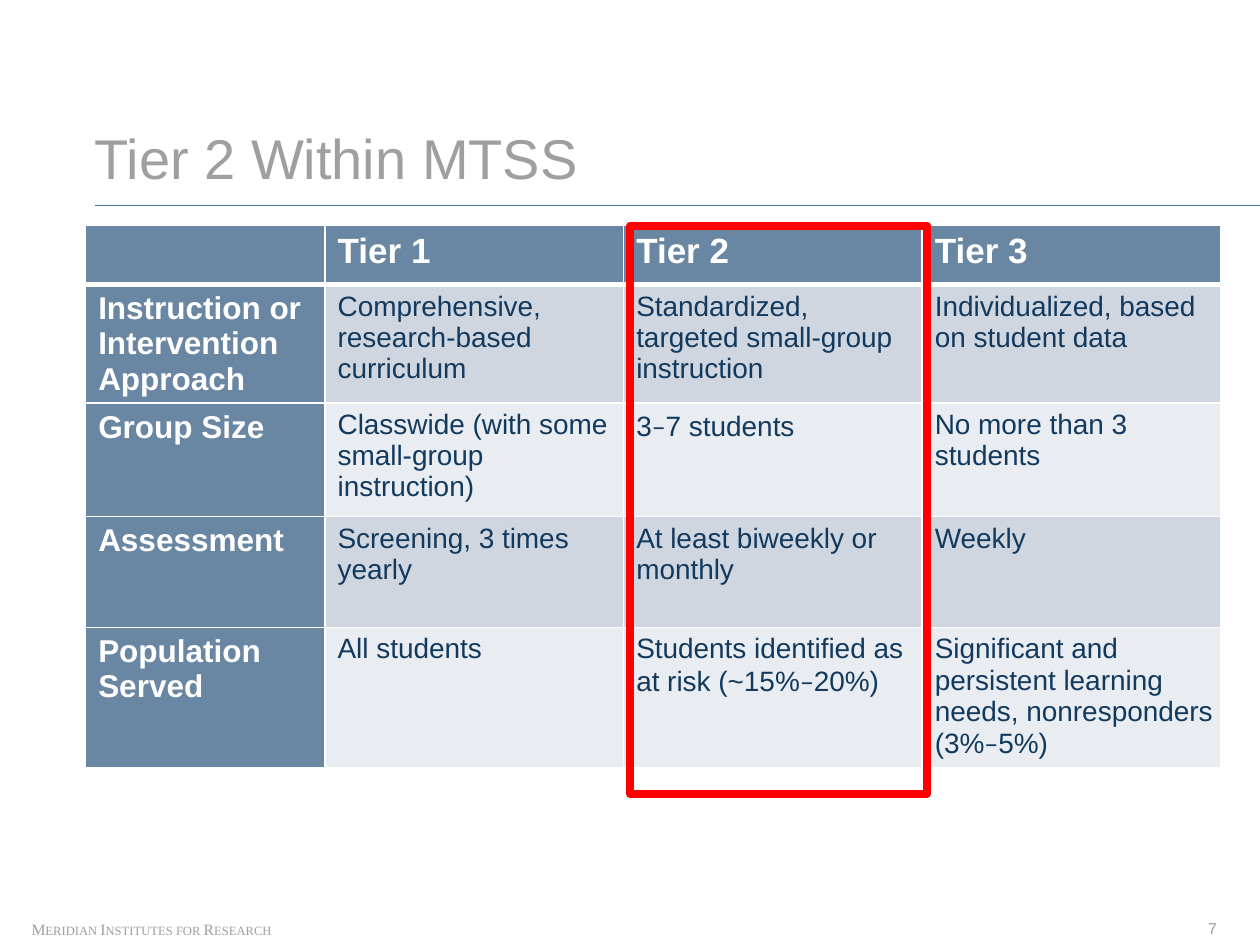
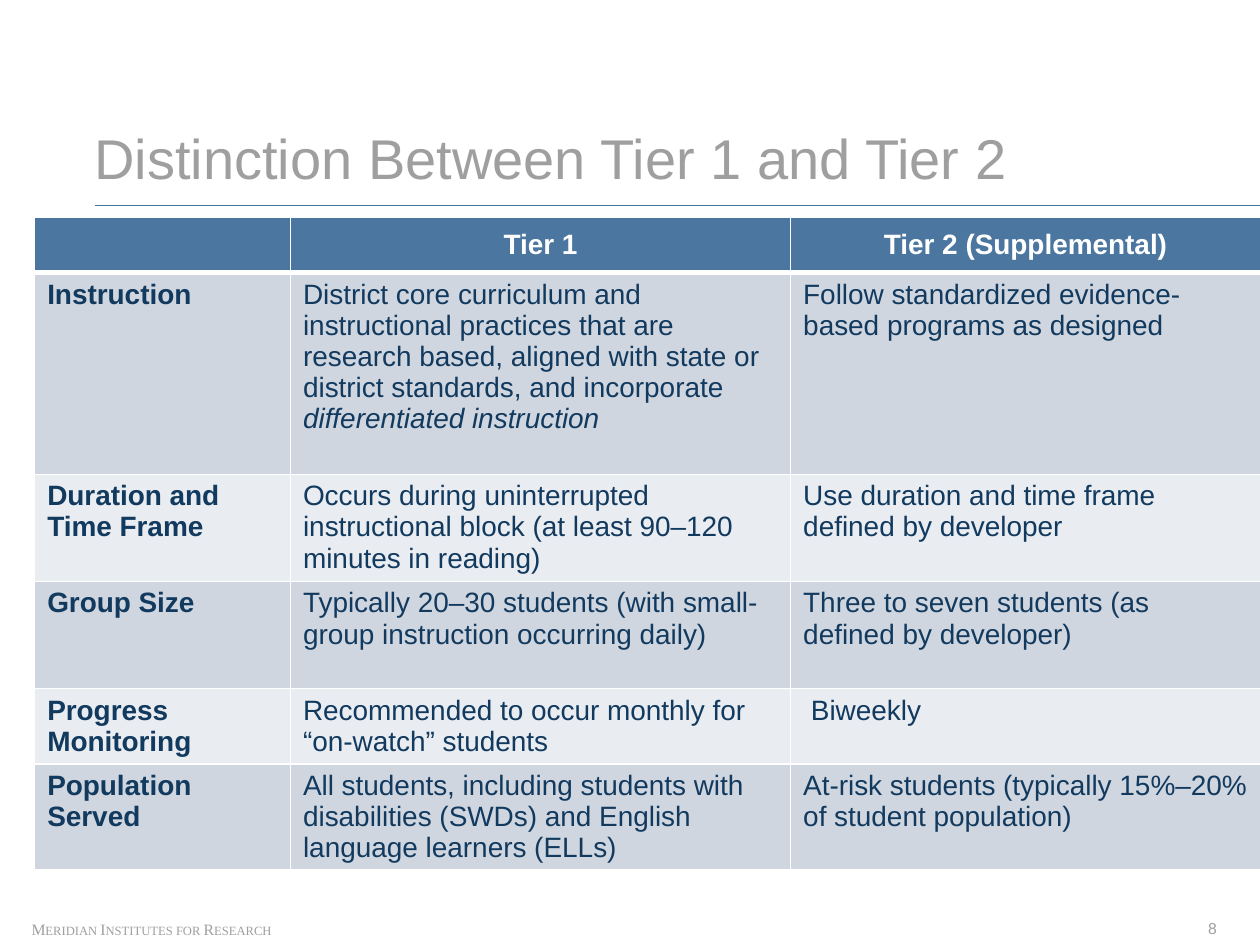
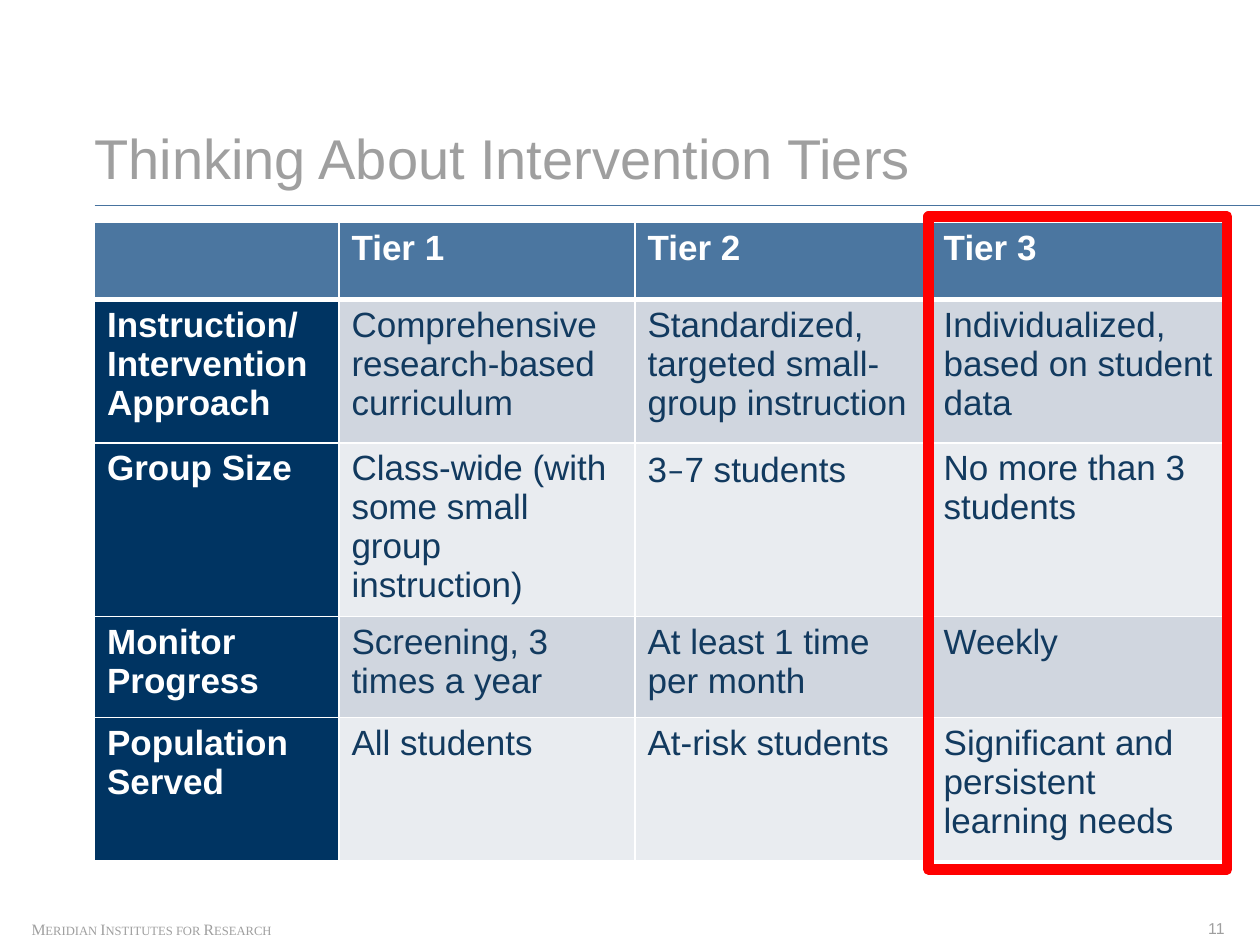
from dataclasses import dataclass, field

from lxml import etree
from pptx import Presentation
from pptx import util as u
from pptx.dml.color import RGBColor
from pptx.enum import shapes, text
from pptx.oxml.ns import qn


@dataclass(frozen=True)
class Theme:
    """Colours, fonts and type sizes shared by the deck."""
    font: str = "Arial"
    footer_font: str = "Times New Roman"
    dash_font: str = "Calibri"
    grey: str = "9F9F9F"
    rule: str = "47739F"
    ink: str = "123A5F"
    white: str = "FFFFFF"
    red: str = "FF0000"
    slate: str = "6986A3"
    blue: str = "4B76A0"
    navy: str = "003462"
    bands: tuple = ("D0D6DF", "E9ECF0")
    title_size: float = 32
    footer_size: float = 9
    border: float = 1
    header_border: float = 3


THEME = Theme()


@dataclass
class Grid:
    """Content and styling of one tier comparison table."""
    box: tuple
    columns: list
    heights: list
    rows: list
    header_fill: str
    header_size: float
    label_size: float
    body_size: float
    label_fill: str = ""
    label_color: str = THEME.white
    centred_header: bool = False
    tight_columns: tuple = ()
    accent: dict = field(default_factory=lambda: {"name": THEME.dash_font})


def points(*lengths):
    """Turn numbers into point lengths."""
    return [u.Pt(length) for length in lengths]


def style(font, size, color, name=THEME.font, bold=False):
    """Apply face, size, colour and weight to a font."""
    font.name, font.size, font.bold = name, u.Pt(size), bold
    font.color.rgb = RGBColor.from_string(color)


def clear_margins(frame):
    """Remove the inner margins of a text frame."""
    frame.margin_left = frame.margin_top = frame.margin_right = frame.margin_bottom = 0


def add_small_text(page, box, words, name=THEME.font):
    """Place a one-line grey footer text and return its shape."""
    label = page.shapes.add_textbox(*points(*box))
    frame = label.text_frame
    frame.word_wrap = False
    frame.auto_size = text.MSO_AUTO_SIZE.SHAPE_TO_FIT_TEXT
    clear_margins(frame)
    frame.text = words
    style(frame.paragraphs[0].runs[0].font, THEME.footer_size, THEME.grey, name)
    return label


def furnish_layout(layout, page):
    """Build the footer name and title rule and move them to the layout."""
    footer = add_small_text(page, (18, 525.6, 140.4, 10.8),
                            "Meridian Institutes for Research", THEME.footer_font)
    for props in footer.element.iter(qn("a:rPr")):
        props.set("cap", "small")
    rule = page.shapes.add_connector(shapes.MSO_CONNECTOR.STRAIGHT,
                                     *points(54, 117.2, 720, 117.2))
    rule.line.color.rgb = RGBColor.from_string(THEME.rule)
    rule.line.width = u.Pt(0.5)
    etree.SubElement(rule.element.find(qn("p:spPr")), qn("a:effectLst"))
    for part in (footer, rule):
        layout.shapes.element.append(part.element)


def add_title(page, words, box=(54, 69.84, 647.28, 38.88)):
    """Fill and place the title placeholder."""
    title = page.shapes.title
    title.left, title.top, title.width, title.height = points(*box)
    frame = title.text_frame
    frame.text = words
    frame.word_wrap = True
    frame.auto_size = text.MSO_AUTO_SIZE.NONE
    frame.vertical_anchor = text.MSO_ANCHOR.BOTTOM
    clear_margins(frame)
    para = frame.paragraphs[0]
    para.alignment = text.PP_ALIGN.LEFT
    style(para.runs[0].font, THEME.title_size, THEME.grey)


def set_borders(cell, row):
    """Draw white cell borders, thicker between the header and the body."""
    edges = {"L": THEME.border, "R": THEME.border,
             "T": THEME.header_border if row == 1 else THEME.border,
             "B": THEME.header_border if row == 0 else THEME.border}
    props = cell._tc.get_or_add_tcPr()
    for side, width in edges.items():
        line = etree.SubElement(props, qn("a:ln" + side), w=str(u.Pt(width)))
        fill = etree.SubElement(line, qn("a:solidFill"))
        etree.SubElement(fill, qn("a:srgbClr"), val=THEME.white)


def write_cell(cell, words, size, color, bold, accent):
    """Write paragraphs whose pieces between bars take the accent format."""
    frame = cell.text_frame
    for index, line in enumerate(words.split("\n")):
        para = frame.add_paragraph() if index else frame.paragraphs[0]
        for order, piece in enumerate(line.split("|")):
            span = para.add_run()
            span.text = piece
            style(span.font, size, color, bold=bold)
            if order % 2:
                for key, value in accent.items():
                    setattr(span.font, key, value)


def cell_look(grid, row, column):
    """Return fill, type size, text colour and weight for a cell."""
    band = THEME.bands[(row + 1) % 2]
    if row == 0:
        return grid.header_fill, grid.header_size, THEME.white, True
    if column == 0:
        return grid.label_fill or band, grid.label_size, grid.label_color, True
    return band, grid.body_size, THEME.ink, False


def add_grid(page, grid):
    """Build the comparison table at its place."""
    size = (sum(grid.columns), sum(grid.heights))
    frame = page.shapes.add_table(len(grid.rows), len(grid.columns),
                                  *points(*grid.box, *size))
    table = frame.table
    for column, width in zip(table.columns, grid.columns):
        column.width = u.Pt(width)
    for row, height in zip(table.rows, grid.heights):
        row.height = u.Pt(height)
    for row, entries in enumerate(grid.rows):
        for column, words in enumerate(entries):
            cell = table.cell(row, column)
            fill, *look = cell_look(grid, row, column)
            set_borders(cell, row)
            cell.fill.solid()
            cell.fill.fore_color.rgb = RGBColor.from_string(fill)
            if row and column in grid.tight_columns:
                cell.margin_right = 0
            if words:
                write_cell(cell, words, *look, grid.accent)
            if row == 0 and grid.centred_header:
                cell.vertical_anchor = text.MSO_ANCHOR.MIDDLE
                cell.text_frame.paragraphs[0].alignment = text.PP_ALIGN.CENTER


def add_highlight(page, box, width):
    """Outline a table column in red."""
    outline = page.shapes.add_shape(shapes.MSO_SHAPE.RECTANGLE, *points(*box))
    outline.shadow.inherit = False
    outline.fill.background()
    outline.line.color.rgb = RGBColor.from_string(THEME.red)
    outline.line.width = u.Pt(width)


def add_page(deck, layout, title, grid, number):
    """Add a slide with title, table and page number."""
    page = deck.slides.add_slide(layout)
    add_title(page, title)
    add_grid(page, grid)
    add_small_text(page, (690.4, 524.9, 10.8, 10.8), str(number))
    return page


TIERS_IN_MTSS = Grid(
    box=(48.96, 128.88),
    columns=[136.8] + [170.64] * 3,
    heights=[33.84, 66.96, 64.8, 63.36, 64.8],
    header_fill=THEME.slate, label_fill=THEME.slate,
    header_size=20, label_size=18, body_size=16,
    tight_columns=(1, 3),
    rows=[
        ["", "Tier 1", "Tier 2", "Tier 3"],
        ["Instruction or\nIntervention Approach",
         "Comprehensive, research-based curriculum",
         "Standardized, targeted small-group instruction",
         "Individualized, based on student data"],
        ["Group Size", "Classwide (with some small-group instruction)",
         "3|–|7 students", "No more than 3 students"],
        ["Assessment", "Screening, 3 times yearly",
         "At least biweekly or monthly", "Weekly"],
        ["Population Served", "All students",
         "Students identified as at risk (~15%|–|20%)",
         "Significant and persistent learning needs, nonresponders (3%|–|5%)"],
    ])

TIER_DISTINCTION = Grid(
    box=(19.8, 124.2),
    columns=[146.16, 285.84, 268.56],
    heights=[31.68, 115.2, 61.2, 61.2, 43.2, 56.16],
    header_fill=THEME.blue, label_color=THEME.ink,
    header_size=16, label_size=16, body_size=16,
    centred_header=True, accent={"italic": True},
    rows=[
        ["", "Tier 1", "Tier 2 (Supplemental)"],
        ["Instruction",
         "District core curriculum and instructional practices that are research based, "
         "aligned with state or district standards, and incorporate "
         "|differentiated instruction",
         "Follow standardized evidence-based programs as designed"],
        ["Duration and Time Frame",
         "Occurs during uninterrupted instructional block "
         "(at least 90–120 minutes in reading)",
         "Use duration and time frame defined by developer"],
        ["Group Size",
         "Typically 20–30 students (with small-group instruction occurring daily)",
         "Three to seven students (as defined by developer)"],
        ["Progress Monitoring",
         "Recommended to occur monthly for “on-watch” students", " Biweekly"],
        ["Population Served",
         "All students, including students with disabilities (SWDs) "
         "and English language learners (ELLs)",
         "At-risk students (typically 15%–20% of student population)"],
    ])

INTERVENTION_TIERS = Grid(
    box=(54, 127.08),
    columns=[139.68] + [169.2] * 3,
    heights=[43.92, 82.08, 99.36, 57.6, 82.08],
    header_fill=THEME.blue, label_fill=THEME.navy,
    header_size=20, label_size=20, body_size=20,
    rows=[
        ["", "Tier 1", "Tier 2", "Tier 3"],
        ["Instruction/\nIntervention Approach",
         "Comprehensive research-based curriculum",
         "Standardized, targeted small-group instruction",
         "Individualized, based on student data"],
        ["Group Size", "Class-wide (with some small group instruction)",
         "3|–|7 students", "No more than 3 students"],
        ["Monitor Progress", "Screening, 3 times a year",
         "At least 1 time per month", "Weekly"],
        ["Population Served", "All students", "At-risk students",
         "Significant and persistent learning needs"],
    ])


def main():
    """Build the three tier slides and save the deck."""
    deck = Presentation()
    deck.slide_width, deck.slide_height = points(720, 540)
    layout = deck.slide_layouts.get_by_name("Title Only")
    overview = add_page(deck, layout, "Tier 2 Within MTSS", TIERS_IN_MTSS, 7)
    furnish_layout(layout, overview)
    add_highlight(overview, (360, 128.88, 169.92, 324.72), 4.5)
    add_page(deck, layout, "Distinction Between Tier 1 and Tier 2", TIER_DISTINCTION, 8)
    thinking = add_page(deck, layout, "Thinking About Intervention Tiers",
                        INTERVENTION_TIERS, 11)
    add_highlight(thinking, (530.64, 123.84, 170.64, 372.96), 6)
    deck.save("out.pptx")


if __name__ == "__main__":
    main()
